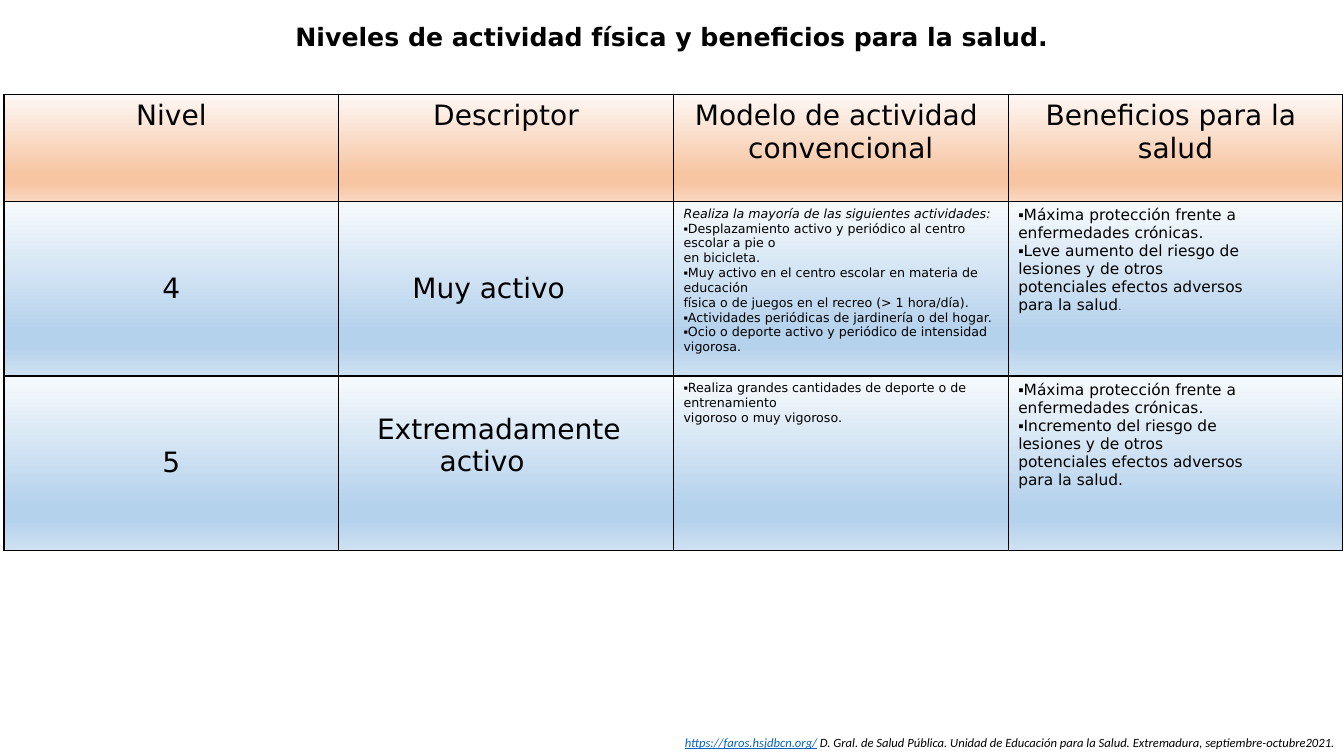
from dataclasses import dataclass

from lxml.etree import SubElement
from pptx import Presentation
from pptx.enum.text import MSO_ANCHOR, MSO_AUTO_SIZE, PP_ALIGN
from pptx.dml.color import RGBColor
from pptx.oxml.ns import qn
from pptx.util import Inches, Pt

COLOURS = {"text": "000000", "border": "000000", "link": "0563C1"}
GRADIENTS = {
    "header": {0: "FEF8F5", 74: "F7C5A2", 83: "F7C5A2", 100: "FAD8C1"},
    "body": {0: "F7FAFD", 74: "B5D2EC", 83: "B5D2EC", 100: "CEE1F2"},
}
FONT = "DejaVu Sans"
COLUMN_WIDTH = 3.32
ROW_HEIGHTS = (1.06, 1.73, 1.73)


@dataclass
class Line:
    text: str
    bullet: bool = False
    italic: bool = False
    indent: float = 0
    tail: str = ""


@dataclass
class CellText:
    lines: list[Line]
    size: float = 20
    align: PP_ALIGN = PP_ALIGN.LEFT
    anchor: MSO_ANCHOR = MSO_ANCHOR.TOP
    top: float = 0.05


def heading(*texts: str) -> CellText:
    return CellText([Line(text) for text in texts], align=PP_ALIGN.CENTER)


def level(number: str) -> CellText:
    return CellText([Line(number)], align=PP_ALIGN.CENTER, anchor=MSO_ANCHOR.MIDDLE)


def benefits(risk: str, ending: Line) -> CellText:
    return CellText([
        Line("Máxima protección frente a", bullet=True),
        Line("enfermedades crónicas."),
        Line(risk, bullet=True),
        Line("lesiones y de otros"),
        Line("potenciales efectos adversos"),
        ending,
    ], size=11)


ROWS = [
    [heading("Nivel"), heading("Descriptor"),
     heading("Modelo de actividad ", "convencional"),
     heading("Beneficios para la ", "salud")],
    [level("4"),
     CellText([Line("Muy activo", indent=0.63)], anchor=MSO_ANCHOR.MIDDLE),
     CellText([
         Line("Realiza la mayoría de las siguientes actividades:", italic=True),
         Line("Desplazamiento activo y periódico al centro escolar a pie o", bullet=True),
         Line("en bicicleta."),
         Line("Muy activo en el centro escolar en materia de educación", bullet=True),
         Line("física o de juegos en el recreo (> 1 hora/día)."),
         Line("Actividades periódicas de jardinería o del hogar.", bullet=True),
         Line("Ocio o deporte activo y periódico de intensidad vigorosa.", bullet=True),
     ], size=9),
     benefits("Leve aumento del riesgo de", Line("para la salud", tail="."))],
    [level("5"),
     CellText([Line("Extremadamente", indent=0.28), Line("activo", indent=0.9)], top=0.37),
     CellText([
         Line("Realiza grandes cantidades de deporte o de entrenamiento", bullet=True),
         Line("vigoroso o muy vigoroso."),
     ], size=9),
     benefits("Incremento del riesgo de", Line("para la salud."))],
]


def add_span(para, text: str, size: float, name: str = FONT,
             colour: str = "text", **formats) -> None:
    span = para.add_run()
    span.text = text
    for key, value in {"size": Pt(size), "name": name, **formats}.items():
        setattr(span.font, key, value)
    span.font.color.rgb = RGBColor.from_string(COLOURS[colour])


def set_bullet(para, indent: float, bullet: bool) -> None:
    properties = para._p.get_or_add_pPr()
    properties.set("marL", str(Inches(indent)))
    properties.set("indent", "0")
    if bullet:
        SubElement(properties, qn("a:buFont"), typeface="Arial")
        SubElement(properties, qn("a:buChar"), char="▪ ")


def add_colour(parent, colour: str) -> None:
    SubElement(parent, qn("a:srgbClr"), val=colour)


def style_cell(cell, stops: dict[int, str]) -> None:
    properties = cell._tc.get_or_add_tcPr()
    for side in ("lnL", "lnR", "lnT", "lnB"):
        border = SubElement(properties, qn(f"a:{side}"), w=str(Pt(1)))
        add_colour(SubElement(border, qn("a:solidFill")), COLOURS["border"])
    gradient = SubElement(properties, qn("a:gradFill"), rotWithShape="1")
    stop_list = SubElement(gradient, qn("a:gsLst"))
    for position, colour in stops.items():
        add_colour(SubElement(stop_list, qn("a:gs"), pos=str(position * 1000)), colour)
    SubElement(gradient, qn("a:lin"), ang="5400000", scaled="0")


def fill_cell(cell, content: CellText) -> None:
    cell.vertical_anchor = content.anchor
    cell.margin_top = Inches(content.top)
    frame = cell.text_frame
    for index, line in enumerate(content.lines):
        para = frame.add_paragraph() if index else frame.paragraphs[0]
        set_bullet(para, line.indent, line.bullet)
        para.alignment = content.align
        add_span(para, line.text, content.size, italic=line.italic)
        if line.tail:
            add_span(para, line.tail, 7)


def add_title(page) -> None:
    title = page.shapes.title
    box = {"left": 2.83, "top": 0.16, "width": 9.55, "height": 0.4}
    for key, value in box.items():
        setattr(title, key, Inches(value))
    frame = title.text_frame
    frame.auto_size = MSO_AUTO_SIZE.NONE
    frame.vertical_anchor = MSO_ANCHOR.MIDDLE
    para = frame.paragraphs[0]
    para.alignment = PP_ALIGN.LEFT
    add_span(para, "Niveles de actividad física y beneficios para la salud.", 18, bold=True)


def add_levels_table(page) -> None:
    columns = len(ROWS[0])
    table = page.shapes.add_table(
        len(ROWS), columns, Inches(0.04), Inches(0.94),
        Inches(columns * COLUMN_WIDTH), Inches(sum(ROW_HEIGHTS))).table
    table.first_row = table.horz_banding = False
    for column in table.columns:
        column.width = Inches(COLUMN_WIDTH)
    for row_index, contents in enumerate(ROWS):
        table.rows[row_index].height = Inches(ROW_HEIGHTS[row_index])
        for column_index, content in enumerate(contents):
            cell = table.cell(row_index, column_index)
            style_cell(cell, GRADIENTS["body" if row_index else "header"])
            fill_cell(cell, content)


def add_credit(page) -> None:
    box = page.shapes.add_textbox(Inches(5.2), Inches(7.24), Inches(8.13), Inches(0.26))
    box.text_frame.word_wrap = True
    para = box.text_frame.paragraphs[0]
    para.alignment = PP_ALIGN.RIGHT
    add_span(para, "https://faros.hsjdbcn.org/", 9, "Calibri", "link",
             italic=True, underline=True)
    add_span(para, " D. Gral. de Salud Pública. Unidad de Educación para la Salud. "
             "Extremadura, septiembre-octubre2021.", 9, "Calibri", italic=True)


def main() -> None:
    deck = Presentation()
    deck.slide_width, deck.slide_height = Inches(13.33), Inches(7.5)
    page = deck.slides.add_slide(deck.slide_layouts[5])
    # Table of activity levels, with the title above and the credit below
    add_levels_table(page)
    add_title(page)
    add_credit(page)
    deck.save("out.pptx")


if __name__ == "__main__":
    main()
